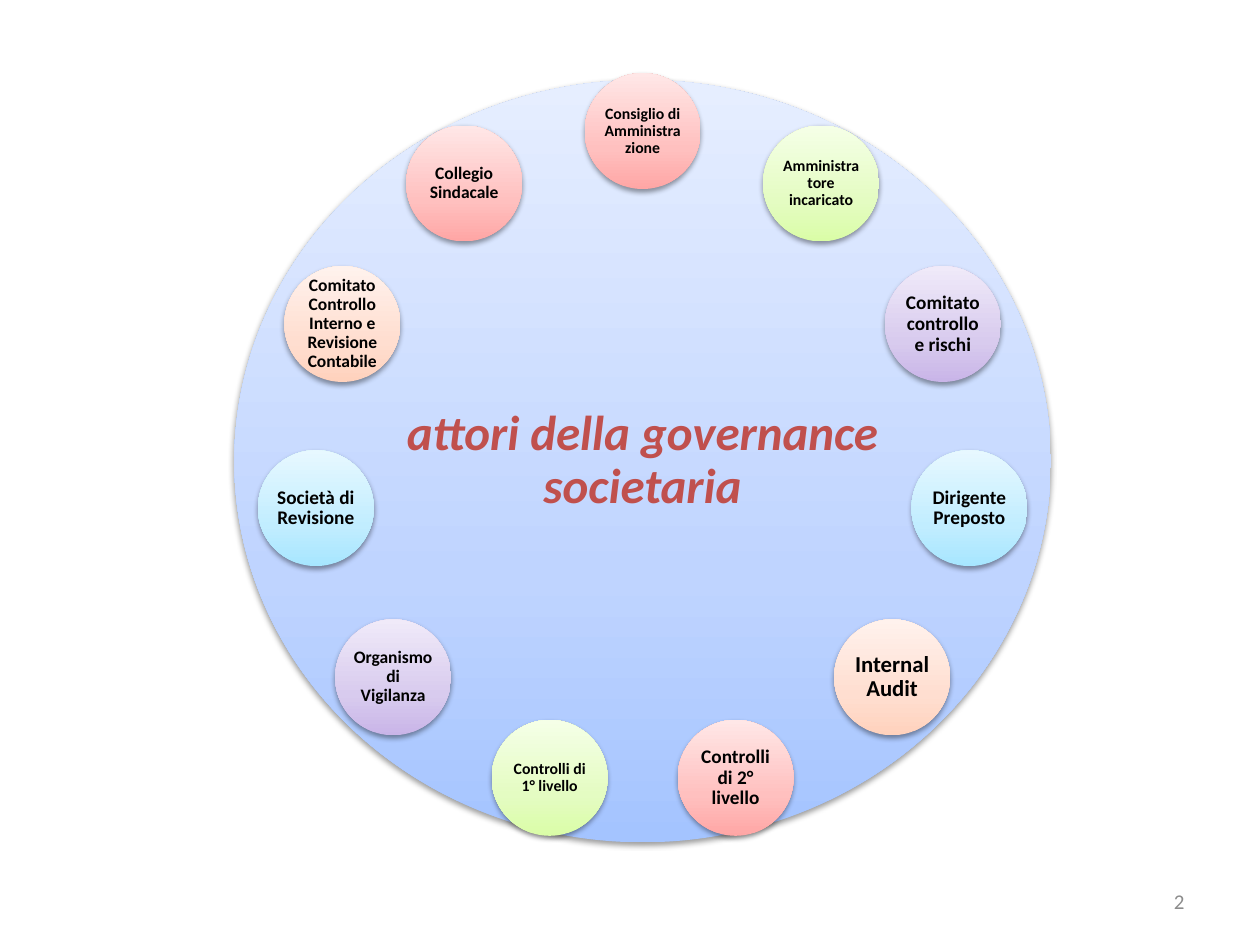
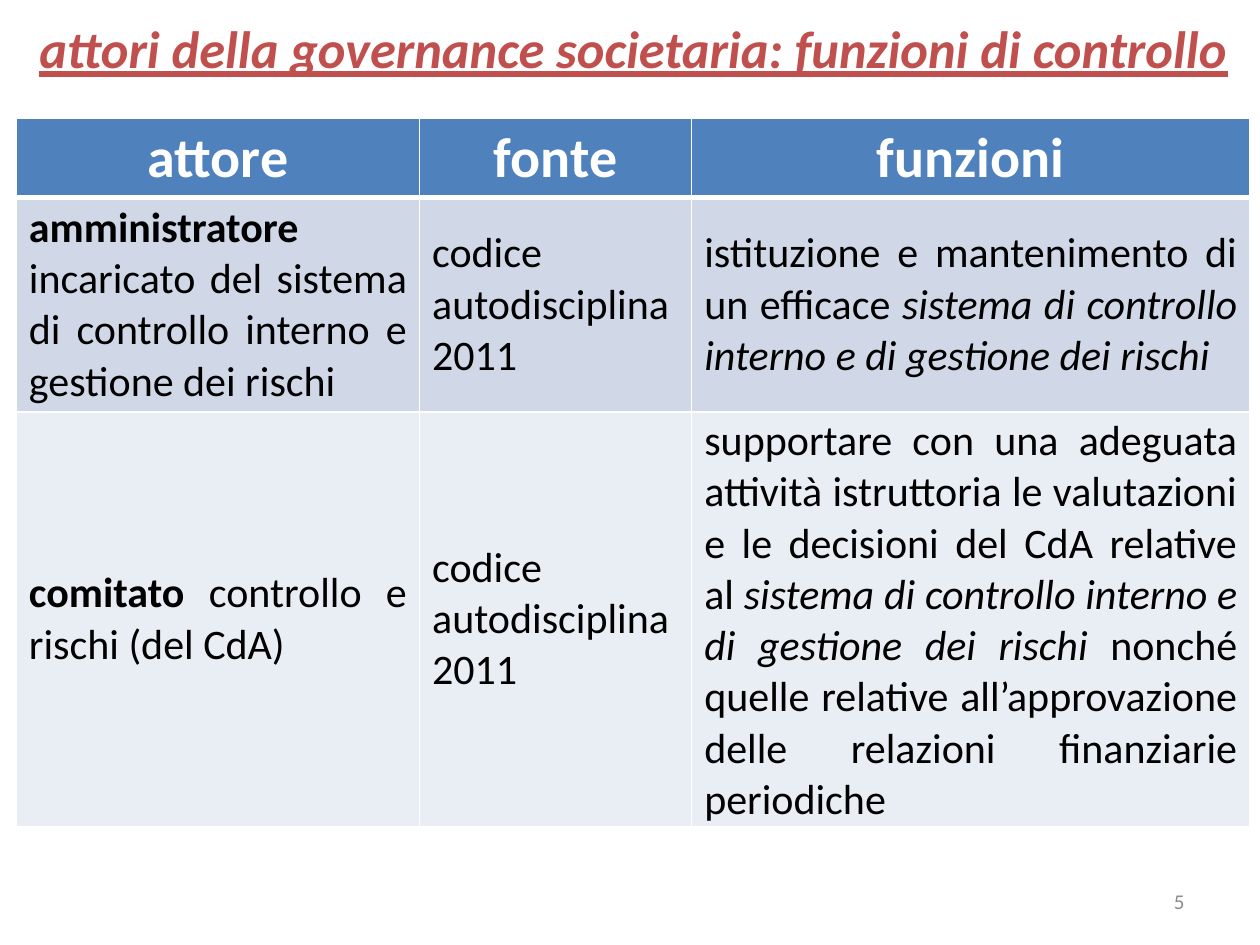
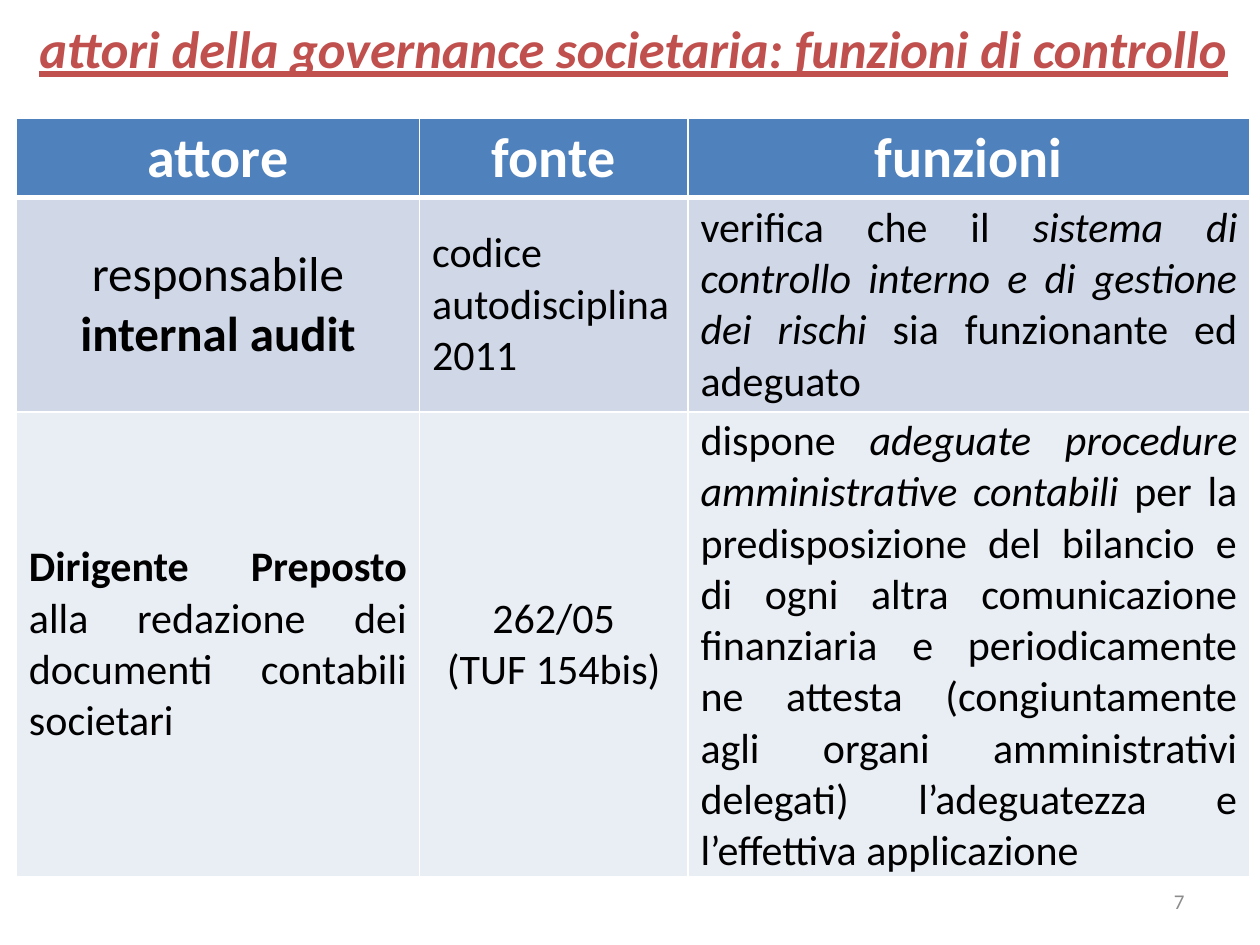
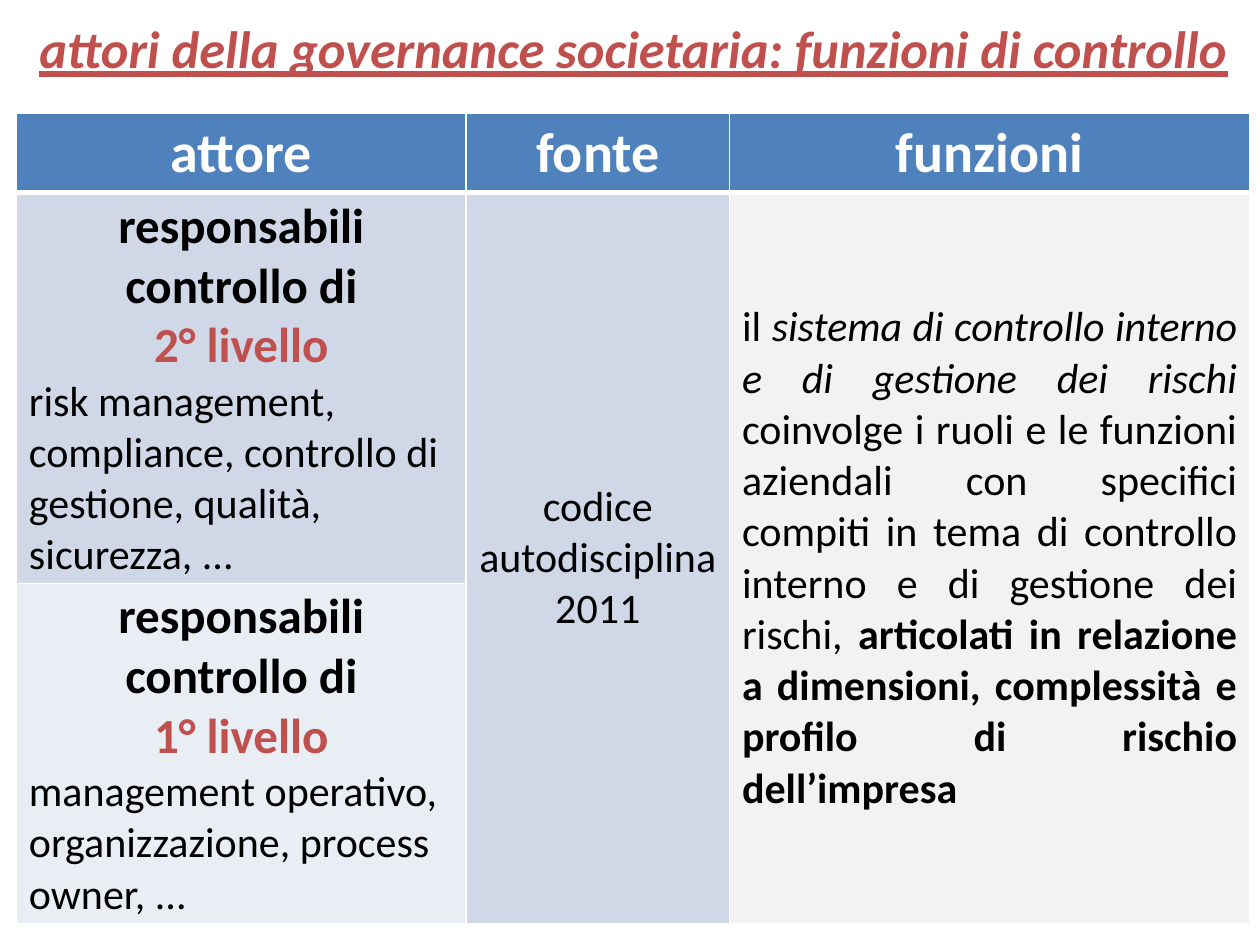
from copy import deepcopy
from dataclasses import dataclass
from math import cos, pi, sin

from lxml import etree
from pptx import Presentation
from pptx.dml.color import RGBColor
from pptx.enum.shapes import MSO_SHAPE
from pptx.enum.text import MSO_ANCHOR, PP_ALIGN
from pptx.oxml.ns import qn
from pptx.util import Emu, Inches, Pt

OVAL = MSO_SHAPE.OVAL
MIDDLE = MSO_ANCHOR.MIDDLE
TOP = MSO_ANCHOR.TOP
LEFT, CENTER, RIGHT, JUSTIFY = (
    PP_ALIGN.LEFT, PP_ALIGN.CENTER, PP_ALIGN.RIGHT, PP_ALIGN.JUSTIFY)

BLACK = RGBColor(0x00, 0x00, 0x00)
WHITE = RGBColor(0xFF, 0xFF, 0xFF)
GRAY = RGBColor(0x8C, 0x8C, 0x8C)
ACCENT = RGBColor(0xC0, 0x50, 0x4D)
HEADER = RGBColor(0x4F, 0x81, 0xBD)
BAND_DARK = RGBColor(0xD0, 0xD8, 0xE8)
BAND_LIGHT = RGBColor(0xE9, 0xED, 0xF4)
PALE = RGBColor(0xF2, 0xF2, 0xF2)

RED_FADE = (RGBColor(0xFF, 0xA6, 0xA5), RGBColor(0xFF, 0xC0, 0xBF), RGBColor(0xFF, 0xE7, 0xE7))
GREEN_FADE = (RGBColor(0xDA, 0xFD, 0xA7), RGBColor(0xE4, 0xFC, 0xC2), RGBColor(0xF5, 0xFF, 0xE7))
PURPLE_FADE = (RGBColor(0xC9, 0xB5, 0xE8), RGBColor(0xD8, 0xCB, 0xEE), RGBColor(0xF0, 0xEA, 0xF9))
CYAN_FADE = (RGBColor(0xA7, 0xE6, 0xFF), RGBColor(0xC1, 0xED, 0xFF), RGBColor(0xE7, 0xF8, 0xFF))
ORANGE_FADE = (RGBColor(0xFF, 0xD2, 0xBD), RGBColor(0xFF, 0xDE, 0xD0), RGBColor(0xFF, 0xF2, 0xED))
BLUE_FADE = (RGBColor(0xA4, 0xC4, 0xFF), RGBColor(0xBF, 0xD4, 0xFF), RGBColor(0xE6, 0xEE, 0xFF))
NODE_FADES = (RED_FADE, GREEN_FADE, PURPLE_FADE, CYAN_FADE, ORANGE_FADE)
FADE_STOPS = (0, 0.35, 1)

FONT = "Calibri"
TITLE = "attori della governance societaria: funzioni di controllo"
HEADINGS = ("attore", "fonte", "funzioni")
HEADER_ROW = 8.4
SYSTEM = "sistema di controllo interno e di gestione dei rischi"
CODE = "codice autodisciplina 2011"

CENTER_X, CENTER_Y = 51, 48.8
ORBIT_X, ORBIT_Y = 26.2, 34.93
NODE_W, NODE_H = 9.2, 12.27
NODES = (
    ("Consiglio di Amministrazione", 9),
    ("Amministratore incaricato", 9),
    ("Comitato controllo e rischi", 11),
    ("Dirigente Preposto", 11),
    ("Internal Audit", 13),
    ("Controlli di 2° livello", 11),
    ("Controlli di 1° livello", 9),
    ("Organismo di Vigilanza", 10),
    ("Società di Revisione", 11),
    ("Comitato Controllo Interno e Revisione Contabile", 10),
    ("Collegio Sindacale", 10),
)


@dataclass
class Para:
    runs: tuple
    size: float = 24
    align: int = JUSTIFY
    color: RGBColor = BLACK


def plain(text):
    return text, ""


def bold(text):
    return text, "b"


def italic(text):
    return text, "i"


def para(*runs, **style):
    return Para(runs, **style)


class Deck:
    def __init__(self):
        self.prs = Presentation()
        self.prs.slide_width = Inches(10)
        self.prs.slide_height = Inches(7.5)
        self.col = self.prs.slide_width / 100
        self.row = self.prs.slide_height / 100
        self.slide = None

    def new_slide(self):
        self.slide = self.prs.slides.add_slide(self.prs.slide_layouts[6])

    def box(self, x, y, w, h):
        return (Emu(round(x * self.col)), Emu(round(y * self.row)),
                Emu(round(w * self.col)), Emu(round(h * self.row)))

    def fill_text(self, tf, paras):
        for i, item in enumerate(paras):
            p = tf.add_paragraph() if i else tf.paragraphs[0]
            p.alignment = item.align
            p.font.name = FONT
            p.font.size = Pt(item.size)
            p.font.color.rgb = item.color
            for text, style in item.runs:
                r = p.add_run()
                r.text = text
                r.font.bold = "b" in style
                r.font.italic = "i" in style
                r.font.underline = "u" in style

    def text(self, item, x, y, w, h, anchor=TOP, wrap=True):
        tf = self.slide.shapes.add_textbox(*self.box(x, y, w, h)).text_frame
        tf.word_wrap = wrap
        tf.vertical_anchor = anchor
        self.fill_text(tf, [item])

    def title(self):
        self.text(para((TITLE, "biu"), size=30, align=CENTER, color=ACCENT),
                  1.1, 1.07, 98.4, 8, wrap=False)

    def number(self, value):
        self.text(para(plain(str(value)), size=12, align=RIGHT, color=GRAY),
                  71.7, 92.67, 23.3, 5.33, MIDDLE)

    def oval(self, item, cx, cy, w, h, fade, inset):
        sp = self.slide.shapes.add_shape(OVAL, *self.box(cx - w / 2, cy - h / 2, w, h))
        self.fade(sp, fade)
        sp.line.fill.background()
        self.shade(sp)
        tf = sp.text_frame
        tf.word_wrap = True
        tf.vertical_anchor = MIDDLE
        tf.margin_left = tf.margin_right = tf.margin_top = tf.margin_bottom = Inches(inset)
        self.fill_text(tf, [item])
        tf.paragraphs[0].line_spacing = 0.9

    def fade(self, sp, colors):
        sp.fill.gradient()
        sp.fill.gradient_angle = 90
        stops = sp.element.spPr.find(qn("a:gradFill")).find(qn("a:gsLst"))
        stops.append(deepcopy(stops[-1]))
        for stop, position, color in zip(sp.fill.gradient_stops, FADE_STOPS, colors):
            stop.position = position
            stop.color.rgb = color

    def shade(self, sp):
        sp.shadow.inherit = False
        effects = sp.element.spPr.find(qn("a:effectLst"))
        shadow = etree.SubElement(effects, qn("a:outerShdw"), blurRad=str(Pt(3.1)),
                                  dist=str(Pt(1.6)), dir="5400000", rotWithShape="0")
        color = etree.SubElement(shadow, qn("a:srgbClr"), val="000000")
        etree.SubElement(color, qn("a:alpha"), val="38000")

    def borders(self, cell, top, bottom):
        tc_pr = cell._tc.get_or_add_tcPr()
        for side, width in (("L", 1), ("R", 1), ("T", top), ("B", bottom)):
            ln = etree.SubElement(tc_pr, qn(f"a:ln{side}"), w=str(Pt(width)))
            fill = etree.SubElement(ln, qn("a:solidFill"))
            etree.SubElement(fill, qn("a:srgbClr"), val=str(WHITE))

    def table(self, top, widths, heights, body):
        header = [[para(bold(name), size=32, align=CENTER, color=WHITE)] for name in HEADINGS]
        rows = [header, *body]
        heights = (HEADER_ROW, *heights)
        frame = self.slide.shapes.add_table(
            len(rows), len(widths), *self.box(1.3, top, sum(widths), sum(heights)))
        table = frame.table
        table.first_row = table.horz_banding = False
        for column, width in zip(table.columns, widths):
            column.width = Emu(round(width * self.col))
        for row, height in zip(table.rows, heights):
            row.height = Emu(round(height * self.row))
        for i, (row, fill) in enumerate(zip(rows, (HEADER, BAND_DARK, BAND_LIGHT))):
            for j, paras in enumerate(row):
                cell = table.cell(i, j)
                cell.vertical_anchor = MIDDLE
                cell.margin_top = cell.margin_bottom = Inches(0.03)
                self.borders(cell, 3 if i == 1 else 1, 3 if i == 0 else 1)
                cell.fill.solid()
                cell.fill.fore_color.rgb = fill
                self.fill_text(cell.text_frame, paras)
        return table


def actors_slide(deck):
    deck.new_slide()
    deck.number(2)
    deck.oval(para(("attori della governance societaria", "bi"), size=28, align=CENTER, color=ACCENT),
              CENTER_X, CENTER_Y, 64.8, 80.67, BLUE_FADE, 0.04)
    for i, (name, size) in enumerate(NODES):
        angle = 2 * pi * i / len(NODES)
        deck.oval(para(bold(name), size=size, align=CENTER),
                  CENTER_X + ORBIT_X * sin(angle), CENTER_Y - ORBIT_Y * cos(angle),
                  NODE_W, NODE_H, NODE_FADES[i % len(NODE_FADES)], 0.01)


def committee_slide(deck):
    deck.new_slide()
    deck.number(5)
    deck.title()
    deck.table(12.53, (32, 21.6, 44.3), (22.67, 43.87), [
        [[para(bold("amministratore"),
               plain(" incaricato del sistema di controllo interno e gestione dei rischi"))],
         [para(plain(CODE))],
         [para(plain("istituzione e mantenimento di un efficace "), italic(SYSTEM))]],
        [[para(bold("comitato"), plain(" controllo e rischi (del CdA)"))],
         [para(plain(CODE))],
         [para(plain("supportare con una adeguata attività istruttoria le valutazioni "
                     "e le decisioni del CdA relative al "),
               italic(SYSTEM),
               plain(" nonché quelle relative all’approvazione delle relazioni "
                     "finanziarie periodiche"))]],
    ])


def audit_slide(deck):
    deck.new_slide()
    deck.number(7)
    deck.title()
    deck.table(12.53, (32, 21.3, 44.6), (22.67, 49.2), [
        [[para(plain("responsabile "), bold("internal audit"), size=28, align=CENTER)],
         [para(plain(CODE))],
         [para(plain("verifica che il "), italic(SYSTEM), plain(" sia funzionante ed adeguato"))]],
        [[para(bold("Dirigente Preposto "),
               plain("alla redazione dei documenti contabili societari"))],
         [para(plain("262/05"), align=CENTER), para(plain("(TUF 154bis)"), align=CENTER)],
         [para(plain("dispone "), italic("adeguate procedure amministrative contabili"),
               plain(" per la predisposizione del bilancio e di ogni altra comunicazione "
                     "finanziaria e periodicamente ne attesta (congiuntamente agli organi "
                     "amministrativi delegati) l’adeguatezza e l’effettiva applicazione"))]],
    ])


def level_paras(level, areas):
    return [para(bold("responsabili controllo di"), size=28, align=CENTER),
            para(bold(f"{level}° livello"), size=28, align=CENTER, color=ACCENT),
            para(plain(areas), align=LEFT)]


def levels_slide(deck):
    deck.new_slide()
    deck.title()
    table = deck.table(12, (35.7, 20.9, 41.3), (41.33, 36), [
        [level_paras(2, "risk management, compliance, controllo di gestione, "
                        "qualità, sicurezza, ..."),
         [para(plain(CODE), align=CENTER)],
         [para(plain("il "), italic(SYSTEM),
               plain(" coinvolge i ruoli e le funzioni aziendali con specifici compiti in tema "
                     "di controllo interno e di gestione dei rischi, "),
               bold("articolati in relazione a dimensioni, complessità e profilo di rischio "
                    "dell’impresa"))]],
        [level_paras(1, "management operativo, organizzazione, process owner, ..."), [], []],
    ])
    for j in (1, 2):
        table.cell(1, j).merge(table.cell(2, j))
    table.cell(1, 2).fill.fore_color.rgb = PALE


def main():
    deck = Deck()
    actors_slide(deck)
    committee_slide(deck)
    audit_slide(deck)
    levels_slide(deck)
    deck.prs.save("out.pptx")


if __name__ == "__main__":
    main()
